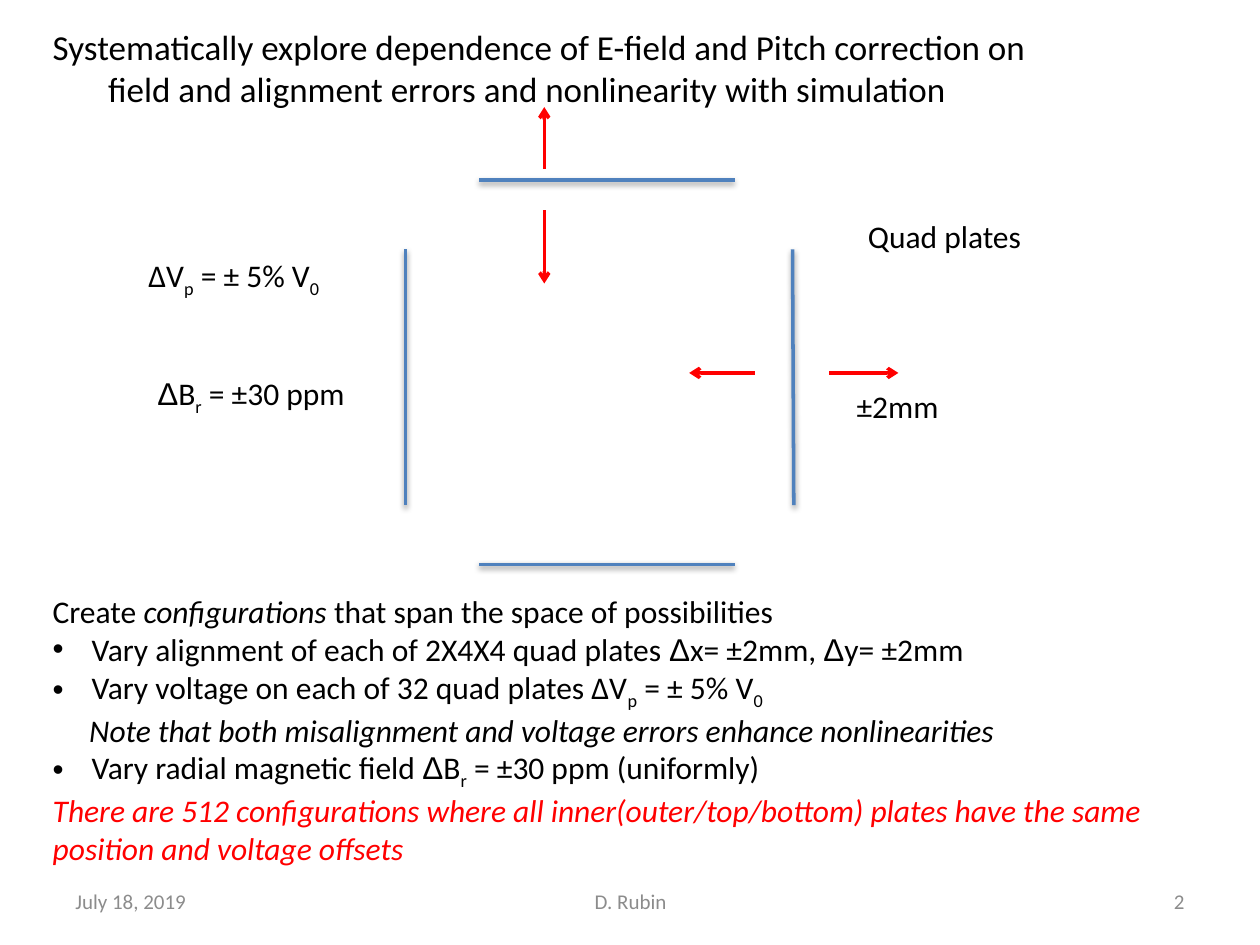
from dataclasses import dataclass

from lxml.etree import SubElement
from pptx import Presentation
from pptx.dml.color import RGBColor
from pptx.enum.shapes import MSO_CONNECTOR as Connector
from pptx.enum.text import MSO_ANCHOR as Anchor, MSO_AUTO_SIZE as AutoSize, PP_ALIGN as Align
from pptx.oxml.ns import qn
from pptx.util import Emu, Pt

EMU_PER_PX = 9144
BLACK, GREY, RED, BLUE = "000000", "8C8C8C", "FF0000", "4F81BD"


@dataclass(frozen=True)
class Span:
    text: str
    font: str = "Calibri"
    italic: bool = False
    subscript: bool = False


@dataclass(frozen=True)
class Para:
    spans: tuple[Span, ...]
    color: str = BLACK
    margin: int = 0
    bullet: bool = False


@dataclass(frozen=True)
class TextBlock:
    left: int
    top: int
    width: int
    height: int
    paras: tuple[Para, ...]
    size: int = 18
    wrap: bool = False
    align: Align = Align.LEFT
    anchor: Anchor = Anchor.TOP


@dataclass(frozen=True)
class Segment:
    x1: int
    y1: int
    x2: int
    y2: int


def px(length: int) -> Emu:
    return Emu(length * EMU_PER_PX)


def rgb(color: str) -> RGBColor:
    return RGBColor.from_string(color)


def draw_segment(page, segment: Segment, color: str):
    line = page.shapes.add_connector(
        Connector.STRAIGHT, px(segment.x1), px(segment.y1), px(segment.x2), px(segment.y2))
    line.line.color.rgb = rgb(color)
    line.line.width = Pt(2)
    return line, SubElement(line._element.spPr, qn("a:effectLst"))


def draw_plate(page, segment: Segment) -> None:
    _, effects = draw_segment(page, segment, BLUE)
    shadow = SubElement(effects, qn("a:outerShdw"), blurRad="40000", dist="20000",
                        dir="5400000", rotWithShape="0")
    shade = SubElement(shadow, qn("a:srgbClr"), val=BLACK)
    SubElement(shade, qn("a:alpha"), val="38000")


def draw_arrow(page, segment: Segment) -> None:
    line, _ = draw_segment(page, segment, RED)
    SubElement(line.line._get_or_add_ln(), qn("a:tailEnd"), type="arrow")


def fill_para(para, content: Para, size: int, align: Align) -> None:
    para.alignment = align
    properties = para._p.get_or_add_pPr()
    if content.margin:
        properties.set("marL", str(px(content.margin)))
    if content.bullet:
        properties.set("indent", str(-px(content.margin)))
        SubElement(properties, qn("a:buFont"), typeface="Arial")
        SubElement(properties, qn("a:buChar"), char="•")
    for span in content.spans:
        run = para.add_run()
        run.text = span.text
        run.font.name = span.font
        run.font.size = Pt(size)
        run.font.italic = span.italic
        run.font.color.rgb = rgb(content.color)
        if span.subscript:
            run.font._element.set("baseline", "-25000")


def draw_text(page, block: TextBlock) -> None:
    box = page.shapes.add_textbox(
        px(block.left), px(block.top), px(block.width), px(block.height))
    frame = box.text_frame
    frame.word_wrap = block.wrap
    frame.auto_size = AutoSize.NONE if block.wrap else AutoSize.SHAPE_TO_FIT_TEXT
    frame.vertical_anchor = block.anchor
    for index, content in enumerate(block.paras):
        para = frame.add_paragraph() if index else frame.paragraphs[0]
        fill_para(para, content, block.size, block.align)


def plain(text: str, color: str = BLACK, margin: int = 0, italic: bool = False) -> Para:
    return Para((Span(text, italic=italic),), color, margin)


def bullet(*spans: Span) -> Para:
    return Para(spans, margin=31, bullet=True)


def footer(left: int, width: int, text: str, align: Align) -> TextBlock:
    return TextBlock(left, 695, width, 40, (plain(text, GREY),), 12, True, align, Anchor.MIDDLE)


DELTA = Span("Δ", "Arial")
VOLTAGE_ERROR = (Span("p", subscript=True), Span(" = ± 5% V"), Span("0", subscript=True))
RADIAL_FIELD = (DELTA, Span("B"), Span("r", subscript=True))

PLATES = (
    Segment(322, 198, 322, 401),
    Segment(629, 198, 630, 401),
    Segment(583, 143, 380, 143),
    Segment(583, 448, 380, 448),
)
ARROWS = (
    Segment(658, 296, 713, 296),
    Segment(599, 296, 547, 296),
    Segment(432, 134, 432, 85),
    Segment(432, 167, 432, 225),
)
TITLE = TextBlock(32, 15, 918, 111, (
    plain("Systematically explore dependence of E-field and Pitch correction on"),
    plain("field and alignment errors and nonlinearity with simulation", margin=44),
), size=20, wrap=True)
LABELS = (
    TextBlock(679, 167, 144, 40, (plain("Quad plates"),)),
    TextBlock(670, 302, 86, 40, (plain("±2mm"),)),
    TextBlock(108, 198, 159, 40, (Para((Span("ΔV"), *VOLTAGE_ERROR)),)),
    TextBlock(115, 292, 170, 40, (Para((*RADIAL_FIELD, Span(" = ±30 ppm"))),)),
)
CONFIGURATIONS = TextBlock(32, 465, 960, 230, (
    Para((Span("Create "), Span("configurations", italic=True),
          Span(" that span the space of possibilities"))),
    bullet(Span("Vary alignment of each of 2X4X4 quad plates "), DELTA,
           Span("x= ±2mm, "), DELTA, Span("y= ±2mm")),
    bullet(Span("Vary voltage on each of 32 quad plates ΔV"), *VOLTAGE_ERROR),
    plain("Note that both misalignment and voltage errors enhance nonlinearities",
          margin=29, italic=True),
    bullet(Span("Vary radial magnetic field "), *RADIAL_FIELD, Span(" = ±30 ppm (uniformly)")),
    plain("There are 512 configurations where all inner(outer/top/bottom) plates "
          "have the same position and voltage offsets", RED, italic=True),
), wrap=True)
FOOTERS = (
    footer(342, 317, "D. Rubin", Align.CENTER),
    footer(50, 233, "July 18, 2019", Align.LEFT),
    footer(717, 233, "2", Align.RIGHT),
)


def main() -> None:
    deck = Presentation()
    deck.slide_width, deck.slide_height = px(1000), px(750)
    page = deck.slides.add_slide(deck.slide_layouts[6])
    for plate in PLATES:
        draw_plate(page, plate)
    for arrow in ARROWS:
        draw_arrow(page, arrow)
    for block in (*LABELS, CONFIGURATIONS, TITLE, *FOOTERS):
        draw_text(page, block)
    deck.save("out.pptx")


if __name__ == "__main__":
    main()
